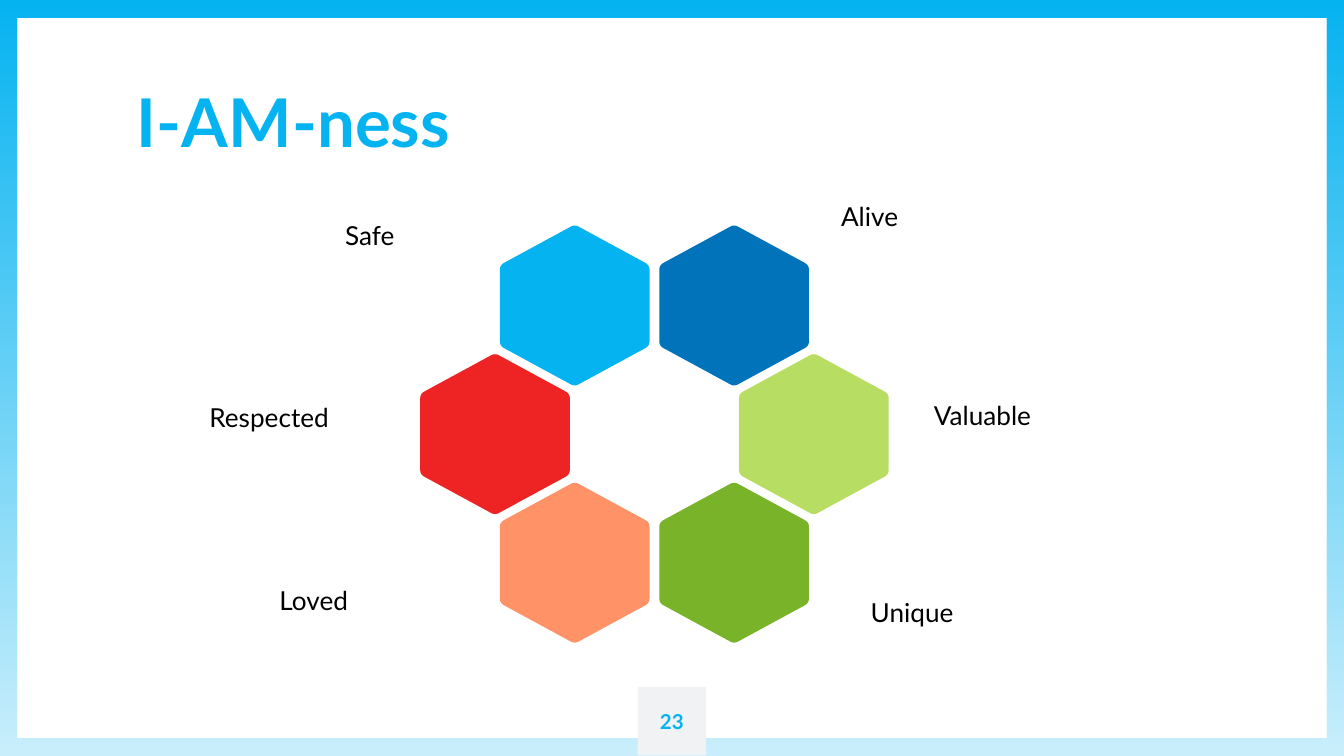
from dataclasses import dataclass
from math import hypot

from lxml.etree import SubElement
from pptx import Presentation
from pptx.dml.color import RGBColor
from pptx.enum.shapes import MSO_SHAPE
from pptx.enum.text import MSO_ANCHOR, PP_ALIGN
from pptx.oxml.ns import qn
from pptx.shapes.autoshape import Shape
from pptx.slide import Slide
from pptx.util import Pt

SKY = RGBColor(0x05, 0xB3, 0xF1)
BLUE = RGBColor(0x00, 0x73, 0xBB)
RED = RGBColor(0xEE, 0x24, 0x24)
LIME = RGBColor(0xB8, 0xDD, 0x63)
GREEN = RGBColor(0x78, 0xB3, 0x29)
PEACH = RGBColor(0xFF, 0x93, 0x67)
PALE_GRAY = RGBColor(0xF0, 0xF2, 0xF3)
BLACK = RGBColor(0x00, 0x00, 0x00)

FONT = "Lato"
SLIDE_WIDTH, SLIDE_HEIGHT = 720, 405

# Ring of hexagons: centre, and half the distance between neighbours in a row
RING_X, RING_Y = 350.6, 232.6
HALF_PITCH, ROW_PITCH = 42.7, 68.9

# Hexagon: half width, half height, half of the upright side, corner cut
HALF_WIDTH, HALF_HEIGHT, HALF_SIDE = 40.1, 43.4, 21.6
CORNER_CUT = 2.5
CURVE_STEPS = 6


@dataclass(frozen=True)
class Box:
    left: float
    top: float
    width: float
    height: float

    def lengths(self) -> tuple[Pt, Pt, Pt, Pt]:
        return Pt(self.left), Pt(self.top), Pt(self.width), Pt(self.height)


@dataclass(frozen=True)
class Hexagon:
    column: int  # in half pitches from the ring's centre
    row: int
    color: RGBColor


@dataclass(frozen=True)
class Label:
    text: str
    left: float
    top: float


PAGE_TAB = Box(341.6, 368, 36.7, 36.7)
TITLE_BOX = Box(73.4, 54, 251.3, 74.9)
TITLE_BOTTOM_INSET = 45
LABEL_WIDTH, LABEL_HEIGHT, LABEL_INSET = 132.5, 31.7, 7.2

HEXAGONS = [
    Hexagon(1, -1, BLUE),
    Hexagon(-1, -1, SKY),
    Hexagon(-2, 0, RED),
    Hexagon(2, 0, LIME),
    Hexagon(1, 1, GREEN),
    Hexagon(-1, 1, PEACH),
]

LABELS = [
    Label("Alive", 443.5, 100.1),
    Label("Valuable", 493.2, 206.6),
    Label("Loved", 142.6, 306),
    Label("Respected", 105.1, 208.1),
    Label("Safe", 177.8, 110.2),
    Label("Unique", 459.4, 312.5),
]


def add_frame(slide: Slide) -> None:
    """Add the border that fades towards the bottom of the slide."""
    frame = slide.shapes.add_shape(
        MSO_SHAPE.FRAME, *Box(-0.7, 0, SLIDE_WIDTH + 0.7, SLIDE_HEIGHT).lengths()
    )
    frame.adjustments[0] = 0.025
    frame.shadow.inherit = False
    frame.line.fill.background()
    frame.fill.gradient()
    frame.fill.gradient_angle = 90
    for stop in frame.fill.gradient_stops:
        stop.color.rgb = SKY
    faded_color = next(frame.element.spPr.iter(qn("a:srgbClr")))
    SubElement(faded_color, qn("a:alpha"), val="21000")


def fill_plain(shape: Shape, color: RGBColor) -> None:
    shape.shadow.inherit = False
    shape.line.fill.background()
    shape.fill.solid()
    shape.fill.fore_color.rgb = color


def rounded_outline(corners: list[tuple[float, float]]) -> list[tuple[float, float]]:
    """Replace each corner with points along a small quadratic curve."""

    def cut_point(corner, neighbour):
        share = CORNER_CUT / hypot(neighbour[0] - corner[0], neighbour[1] - corner[1])
        return tuple(c + (n - c) * share for c, n in zip(corner, neighbour))

    points = []
    for index, corner in enumerate(corners):
        start = cut_point(corner, corners[index - 1])
        end = cut_point(corner, corners[(index + 1) % len(corners)])
        for step in range(CURVE_STEPS + 1):
            t = step / CURVE_STEPS
            points.append(tuple(
                (1 - t) ** 2 * s + 2 * t * (1 - t) * c + t**2 * e
                for s, c, e in zip(start, corner, end)
            ))
    return points


def add_hexagon(slide: Slide, hexagon: Hexagon) -> None:
    center_x = RING_X + hexagon.column * HALF_PITCH
    center_y = RING_Y + hexagon.row * ROW_PITCH
    corners = [
        (0, -HALF_HEIGHT), (HALF_WIDTH, -HALF_SIDE), (HALF_WIDTH, HALF_SIDE),
        (0, HALF_HEIGHT), (-HALF_WIDTH, HALF_SIDE), (-HALF_WIDTH, -HALF_SIDE),
    ]
    points = [
        (Pt(center_x + x), Pt(center_y + y)) for x, y in rounded_outline(corners)
    ]
    builder = slide.shapes.build_freeform(*points[0])
    builder.add_line_segments(points[1:], close=True)
    fill_plain(builder.convert_to_shape(), hexagon.color)


def add_text(
    slide: Slide,
    text: str,
    box: Box,
    size: float,
    color: RGBColor = BLACK,
    bold: bool = False,
    inset: float = 0,
    anchor: MSO_ANCHOR = MSO_ANCHOR.TOP,
    alignment: PP_ALIGN = PP_ALIGN.LEFT,
) -> Shape:
    shape = slide.shapes.add_textbox(*box.lengths())
    frame = shape.text_frame
    frame.word_wrap = True
    frame.vertical_anchor = anchor
    frame.margin_left = frame.margin_right = Pt(inset)
    frame.margin_top = frame.margin_bottom = Pt(inset)
    paragraph = frame.paragraphs[0]
    paragraph.text = text
    paragraph.alignment = alignment
    paragraph.font.name = FONT
    paragraph.font.size = Pt(size)
    paragraph.font.bold = bold
    paragraph.font.color.rgb = color
    return shape


def main() -> None:
    presentation = Presentation()
    presentation.slide_width = Pt(SLIDE_WIDTH)
    presentation.slide_height = Pt(SLIDE_HEIGHT)
    slide = presentation.slides.add_slide(presentation.slide_layouts[6])

    add_frame(slide)
    page_tab = slide.shapes.add_shape(MSO_SHAPE.RECTANGLE, *PAGE_TAB.lengths())
    fill_plain(page_tab, PALE_GRAY)

    title = add_text(
        slide, "I-AM-ness", TITLE_BOX, 36, SKY, bold=True, anchor=MSO_ANCHOR.BOTTOM
    )
    title.text_frame.margin_bottom = Pt(TITLE_BOTTOM_INSET)
    title.text_frame.paragraphs[0].line_spacing = 0.9
    add_text(
        slide, "23", PAGE_TAB, 11, SKY, bold=True,
        anchor=MSO_ANCHOR.MIDDLE, alignment=PP_ALIGN.CENTER,
    )

    for hexagon in HEXAGONS:
        add_hexagon(slide, hexagon)
    for label in LABELS:
        box = Box(label.left, label.top, LABEL_WIDTH, LABEL_HEIGHT)
        add_text(slide, label.text, box, 14, inset=LABEL_INSET)

    presentation.save("out.pptx")


if __name__ == "__main__":
    main()
